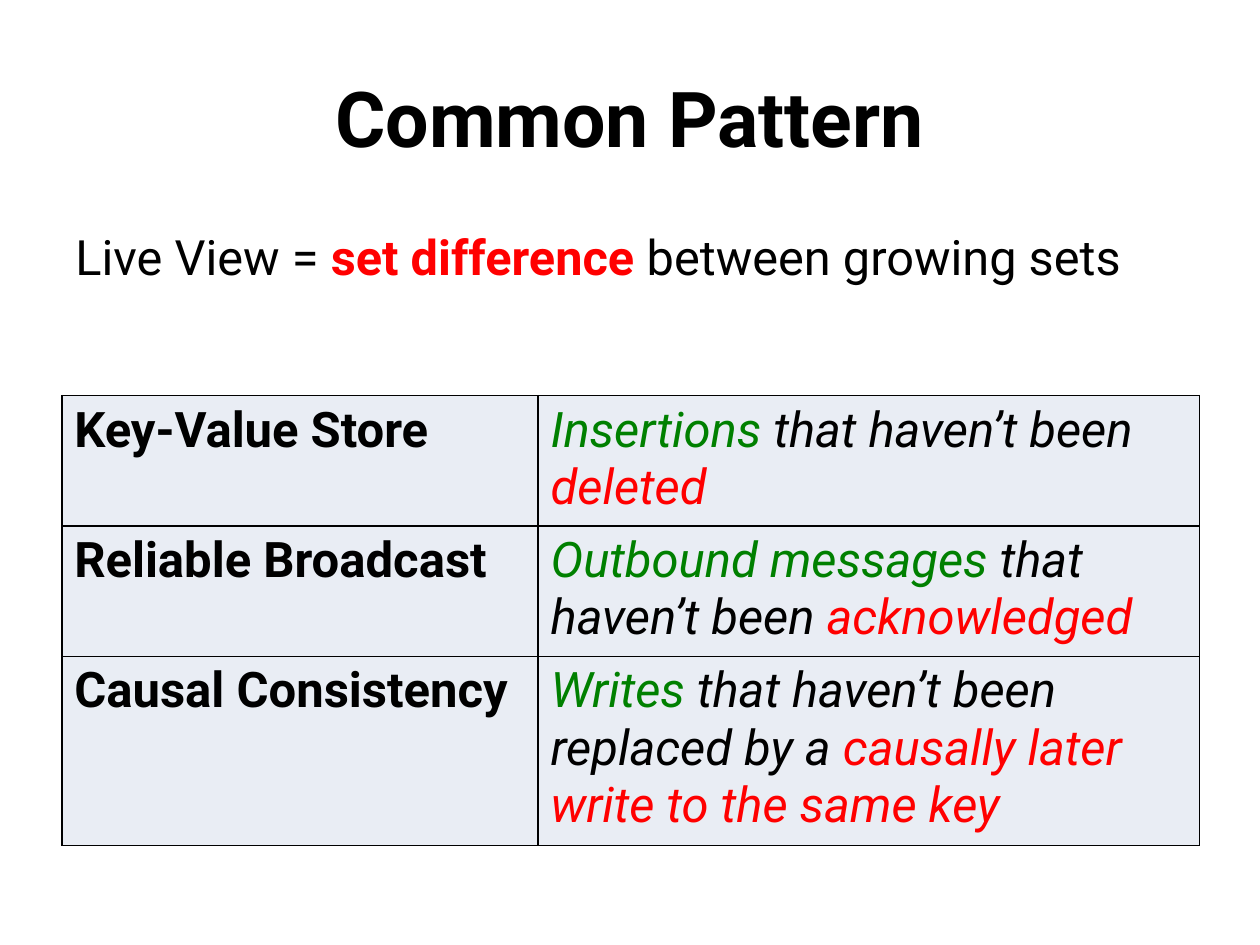
from pptx import Presentation
from pptx.dml.color import RGBColor
from pptx.enum.text import MSO_ANCHOR, PP_ALIGN
from pptx.oxml import parse_xml
from pptx.oxml.ns import nsdecls
from pptx.util import Inches, Pt

COLORS = {"black": "000000", "red": "FF0000", "green": "008000", "cell": "E9EDF4"}
FONT = "Roboto"
TITLE = "Common Pattern"
SUMMARY = [
    ("Live View = ", "black", False),
    ("set difference", "red", True),
    (" between growing sets", "black", False),
]
PATTERNS = [
    ("Key-Value Store",
     [("Insertions ", "green"), ("that haven’t been ", "black"), ("deleted", "red")]),
    ("Reliable Broadcast",
     [("Outbound messages", "green"), (" that haven’t been ", "black"), ("acknowledged", "red")]),
    ("Causal Consistency",
     [("Writes", "green"), (" that haven’t been replaced by a ", "black"),
      ("causally later write to the same key", "red")]),
]
COLUMN_WIDTHS = [3.78, 5.25]
ROW_HEIGHTS = [1.01, 1.01, 1.46]


def write(paragraph, spans, size, italic=False):
    """Write (text, color, bold) spans into a paragraph."""
    paragraph.font.name = FONT
    paragraph.font.size = Pt(size)
    paragraph.font.italic = italic
    for text, color, bold in spans:
        span = paragraph.add_run()
        span.text = text
        span.font.bold = bold
        span.font.color.rgb = RGBColor.from_string(COLORS[color])


def style_cell(cell):
    """Fill a cell and draw its four borders."""
    cell.fill.solid()
    cell.fill.fore_color.rgb = RGBColor.from_string(COLORS["cell"])
    properties = cell._tc.get_or_add_tcPr()
    for index, side in enumerate(("lnL", "lnR", "lnT", "lnB")):
        properties.insert(index, parse_xml(
            f'<a:{side} {nsdecls("a")} w="{Pt(1)}"><a:solidFill>'
            f'<a:srgbClr val="{COLORS["black"]}"/></a:solidFill></a:{side}>'))


def add_title(page):
    """Place and format the title."""
    title = page.shapes.title
    title.left, title.top, title.width, title.height = map(Inches, (0.5, 0.3, 9, 1.25))
    title.text_frame.vertical_anchor = MSO_ANCHOR.MIDDLE
    paragraph = title.text_frame.paragraphs[0]
    paragraph.alignment = PP_ALIGN.CENTER
    write(paragraph, [(TITLE, "black", True)], 44)


def add_summary(page):
    """Add the sentence below the title."""
    box = page.shapes.add_textbox(*map(Inches, (0.5, 1.75, 9, 0.58)))
    box.text_frame.word_wrap = True
    paragraph = box.text_frame.paragraphs[0]
    paragraph.space_before = Pt(2)
    write(paragraph, SUMMARY, 27.8)


def add_patterns(page):
    """Add the table of patterns."""
    table = page.shapes.add_table(
        len(PATTERNS), len(COLUMN_WIDTHS), Inches(0.49), Inches(3.14),
        Inches(sum(COLUMN_WIDTHS)), Inches(sum(ROW_HEIGHTS))).table
    table.first_row = table.horz_banding = False
    for column, width in zip(table.columns, COLUMN_WIDTHS):
        column.width = Inches(width)
    for row, height, (name, view) in zip(table.rows, ROW_HEIGHTS, PATTERNS):
        row.height = Inches(height)
        name_cell, view_cell = row.cells
        write(name_cell.text_frame.paragraphs[0], [(name, "black", True)], 28)
        write(view_cell.text_frame.paragraphs[0],
              [(text, color, False) for text, color in view], 28, italic=True)
        for cell in (name_cell, view_cell):
            style_cell(cell)


def main():
    """Build the slide and save it."""
    deck = Presentation()
    deck.slide_width, deck.slide_height = Inches(10), Inches(7.5)
    page = deck.slides.add_slide(deck.slide_layouts[5])
    add_title(page)
    add_summary(page)
    add_patterns(page)
    deck.save("out.pptx")


if __name__ == "__main__":
    main()
